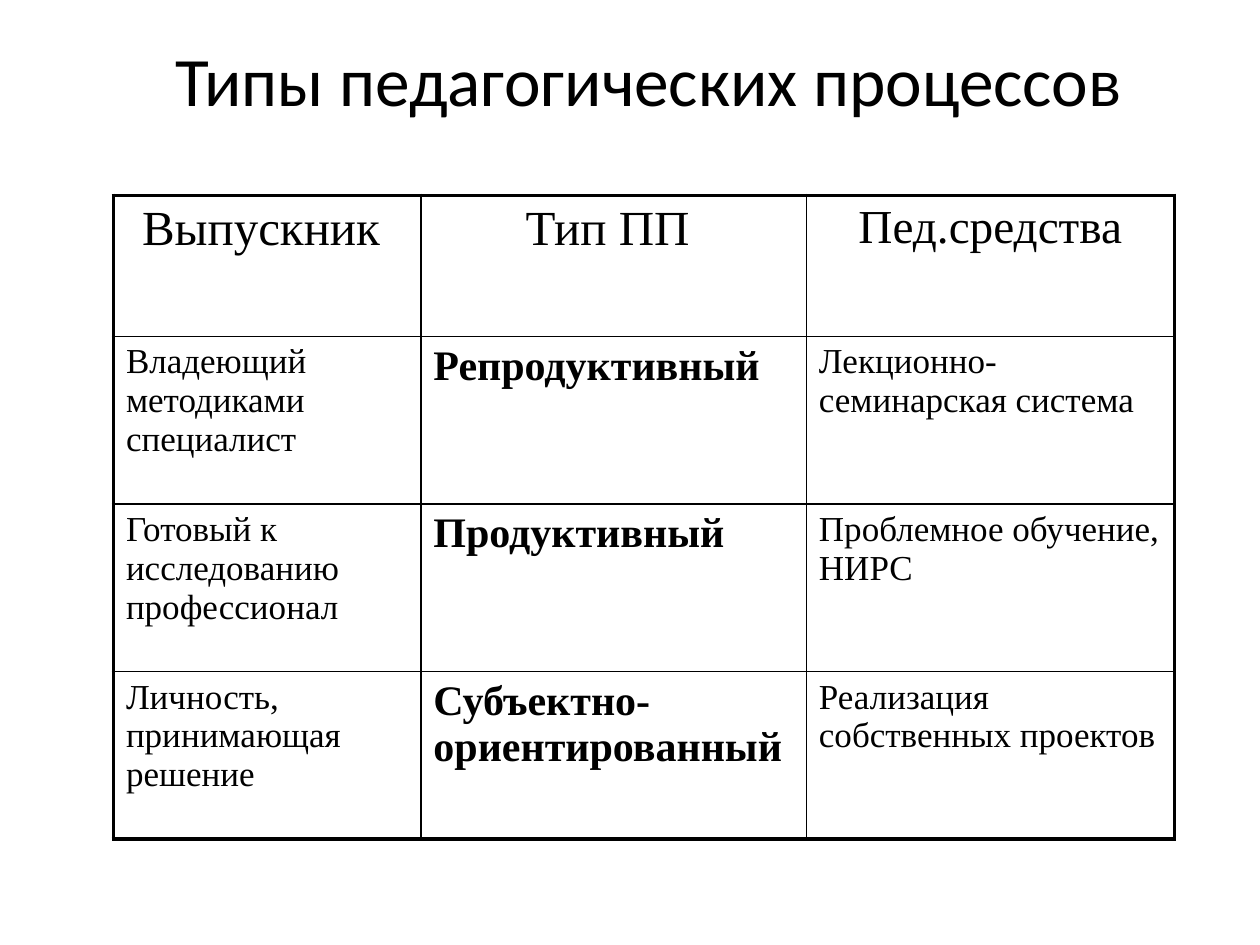
from lxml.etree import SubElement
from pptx import Presentation
from pptx.dml.color import RGBColor
from pptx.enum.text import MSO_ANCHOR, PP_ALIGN
from pptx.oxml.ns import qn
from pptx.util import Inches, Pt

BLACK = RGBColor(0, 0, 0)
TITLE = "Типы педагогических процессов"
ROWS = [
    ("Выпускник ", "Тип ПП ", "Пед.средства"),
    ("Владеющий методиками специалист", "Репродуктивный", "Лекционно-семинарская система"),
    ("Готовый к исследованию профессионал", "Продуктивный", "Проблемное обучение, НИРС"),
    ("Личность, принимающая решение", "Субъектно- ориентированный",
     "Реализация собственных проектов"),
]
COLUMN_WIDTHS = (2.44, 3.06, 2.92)
ROW_HEIGHTS = (1.12, 1.33, 1.33, 1.33)
HEADER_SIZES = (28, 28, 27)
BODY_SIZES = (20, 24, 20)
TYPE_COLUMN = 1
LEFT, TABLE_TOP = 0.9, 1.55
THIN, THICK = 1, 2.25


def style(paragraph, font_name, size, bold=False):
    font = paragraph.font
    font.name, font.size, font.bold = font_name, Pt(size), bold
    font.color.rgb = BLACK


def add_borders(cell, widths):
    """Draw solid cell borders; widths maps a side (L, R, T, B) to points."""
    properties = cell._tc.get_or_add_tcPr()
    for position, (side, width) in enumerate(widths.items()):
        line = properties.makeelement(qn(f"a:ln{side}"), {"w": str(Pt(width))})
        fill = SubElement(line, qn("a:solidFill"))
        SubElement(fill, qn("a:srgbClr"), val=str(BLACK))
        properties.insert(position, line)


presentation = Presentation()
presentation.slide_width, presentation.slide_height = Inches(10), Inches(7.5)
slide = presentation.slides.add_slide(presentation.slide_layouts[6])

title_box = slide.shapes.add_textbox(Inches(LEFT), 0, Inches(8.5), Inches(1.25))
title_frame = title_box.text_frame
title_frame.word_wrap = True
title_frame.vertical_anchor = MSO_ANCHOR.MIDDLE
title_frame.text = TITLE
title_frame.paragraphs[0].alignment = PP_ALIGN.CENTER
style(title_frame.paragraphs[0], "Calibri", 39.6)

table = slide.shapes.add_table(
    len(ROWS), len(COLUMN_WIDTHS), Inches(LEFT), Inches(TABLE_TOP),
    Inches(sum(COLUMN_WIDTHS)), Inches(sum(ROW_HEIGHTS))).table
table.first_row = table.horz_banding = False
for column, width in zip(table.columns, COLUMN_WIDTHS):
    column.width = Inches(width)

last_row, last_column = len(ROWS) - 1, len(COLUMN_WIDTHS) - 1
for r, texts in enumerate(ROWS):
    table.rows[r].height = Inches(ROW_HEIGHTS[r])
    is_header = r == 0
    sizes = HEADER_SIZES if is_header else BODY_SIZES
    for c, text in enumerate(texts):
        cell = table.cell(r, c)
        cell.fill.background()
        cell.text = text
        paragraph = cell.text_frame.paragraphs[0]
        paragraph.alignment = PP_ALIGN.CENTER if is_header else PP_ALIGN.LEFT
        paragraph.space_before = Pt(sizes[c] * 0.2)
        style(paragraph, "Times New Roman", sizes[c], not is_header and c == TYPE_COLUMN)
        add_borders(cell, {
            "L": THICK if c == 0 else THIN,
            "R": THICK if c == last_column else THIN,
            "T": THICK if is_header else THIN,
            "B": THICK if r == last_row else THIN,
        })

presentation.save("out.pptx")
